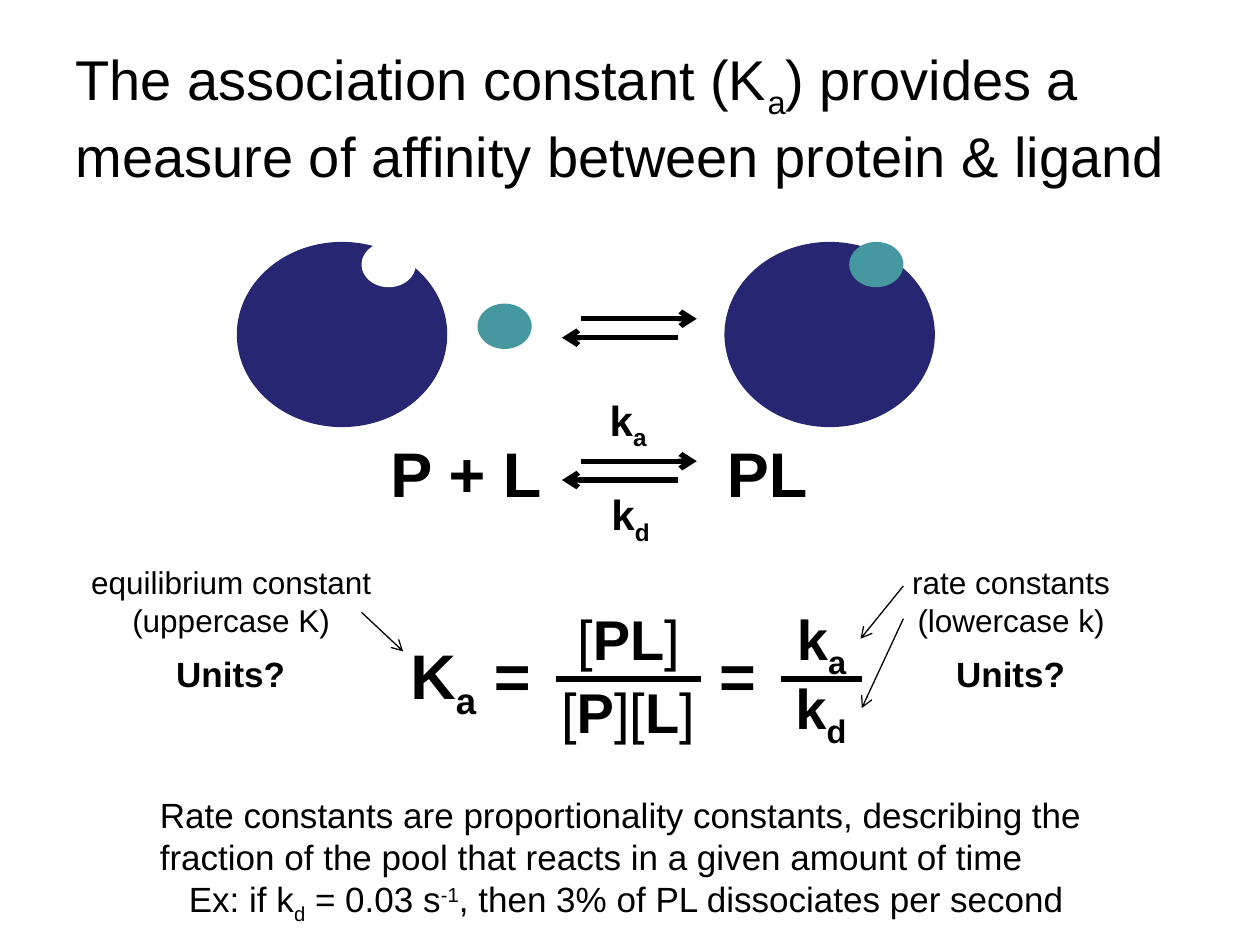
from dataclasses import dataclass
from typing import NamedTuple

from lxml import etree
from pptx import Presentation
from pptx import util as u
from pptx.dml.color import RGBColor
from pptx.enum import shapes, text
from pptx.oxml import ns

BLACK, WHITE, NAVY, TEAL = "000000", "FFFFFF", "262673", "4597A0"
LEFT, CENTER = text.PP_ALIGN.LEFT, text.PP_ALIGN.CENTER
SUBSCRIPT, SUPERSCRIPT = -25, 30


class Run(NamedTuple):
    text: str
    bold: bool = False
    baseline: int = 0


@dataclass
class Label:
    left: float
    top: float
    width: float
    height: float
    size: int
    paragraphs: list[list[Run]]
    align: text.PP_ALIGN = LEFT
    wrap: bool = False


@dataclass
class Line:
    start: tuple[float, float]
    end: tuple[float, float]
    weight: float = 3
    arrow: bool = True


def color(value: str) -> RGBColor:
    return RGBColor.from_string(value)


def add_runs(paragraph, runs: list[Run], size: int) -> None:
    for item in runs:
        run = paragraph.add_run()
        run.text = item.text
        run.font.name = "Arial"
        run.font.size = u.Pt(size)
        run.font.bold = item.bold
        run.font.color.rgb = color(BLACK)
        if item.baseline:
            run._r.get_or_add_rPr().set("baseline", str(item.baseline * 1000))


def add_label(slide, label: Label):
    box = slide.shapes.add_textbox(*map(u.Inches, (label.left, label.top, label.width, label.height)))
    frame = box.text_frame
    frame.word_wrap = label.wrap
    frame.auto_size = text.MSO_AUTO_SIZE.SHAPE_TO_FIT_TEXT
    for index, runs in enumerate(label.paragraphs):
        paragraph = frame.add_paragraph() if index else frame.paragraphs[0]
        paragraph.alignment = label.align
        add_runs(paragraph, runs, label.size)
    return box


def add_line(slide, line: Line) -> None:
    connector = slide.shapes.add_connector(
        shapes.MSO_CONNECTOR.STRAIGHT, *map(u.Inches, (*line.start, *line.end)))
    connector.line.color.rgb = color(BLACK)
    connector.line.width = u.Pt(line.weight)
    if line.arrow:
        etree.SubElement(connector.line._get_or_add_ln(), ns.qn("a:tailEnd"), type="arrow")
    etree.SubElement(connector._element.spPr, ns.qn("a:effectLst"))


def add_ellipse(slide, left: float, top: float, width: float, height: float, fill: str) -> None:
    shape = slide.shapes.add_shape(
        shapes.MSO_SHAPE.OVAL, *map(u.Inches, (left, top, width, height)))
    shape.shadow.inherit = False
    shape.fill.solid()
    shape.fill.fore_color.rgb = color(fill)
    shape.line.fill.background()


def add_ligand(slide, left: float, top: float, fill: str = TEAL) -> None:
    add_ellipse(slide, left, top, 0.43, 0.36, fill)


def add_protein(slide, left: float, site_fill: str) -> None:
    add_ellipse(slide, left, 1.92, 1.67, 1.47, NAVY)
    add_ligand(slide, left + 0.99, 1.92, site_fill)


def add_equilibrium_arrows(slide, top: float) -> None:
    add_line(slide, Line((4.61, top), (5.53, top)))
    add_line(slide, Line((5.38, top + 0.15), (4.46, top + 0.15)))


def rate_constant(subscript: str) -> list[list[Run]]:
    return [[Run("k", True), Run(subscript, True, SUBSCRIPT)]]


def add_title(slide) -> None:
    title = slide.shapes.title
    title.left, title.top, title.width, title.height = map(u.Inches, (0.5, 0.3, 9, 1.25))
    frame = title.text_frame
    frame.word_wrap = True
    frame.auto_size = text.MSO_AUTO_SIZE.NONE
    frame.vertical_anchor = text.MSO_ANCHOR.MIDDLE
    frame.paragraphs[0].alignment = LEFT
    add_runs(frame.paragraphs[0], [
        Run("The association constant (K"),
        Run("a", baseline=SUBSCRIPT),
        Run(") provides a measure of affinity between protein & ligand"),
    ], 32)


def add_reaction(slide) -> None:
    add_protein(slide, 1.88, WHITE)
    add_ligand(slide, 3.79, 2.41)
    add_protein(slide, 5.75, TEAL)
    for top in (2.53, 3.66):
        add_equilibrium_arrows(slide, top)
    for label in (
        Label(3, 3.4, 1.41, 0.71, 36, [[Run("P + L", True)]]),
        Label(5.67, 3.4, 0.85, 0.71, 36, [[Run("PL", True)]]),
        Label(4.73, 3.08, 0.51, 0.5, 24, rate_constant("a"), CENTER),
        Label(4.74, 3.83, 0.53, 0.5, 24, rate_constant("d"), CENTER),
    ):
        add_label(slide, label)


def add_equation(slide) -> None:
    equation = add_label(slide, Label(3.16, 5, 3.03, 0.71, 36, [
        [Run("K", True), Run("a", True, SUBSCRIPT), Run(" =\t=", True)]], wrap=True))
    properties = equation.text_frame.paragraphs[0]._p.get_or_add_pPr()
    tabs = etree.SubElement(properties, ns.qn("a:tabLst"))
    etree.SubElement(tabs, ns.qn("a:tab"), pos=str(u.Inches(2.45)), algn="l")
    for label in (
        Label(4.48, 4.75, 1.02, 0.64, 32,
              [[Run("["), Run("PL", True), Run("]")]], CENTER),
        Label(4.35, 5.33, 1.27, 0.64, 32,
              [[Run("["), Run("P", True), Run("]["), Run("L", True), Run("]")]], CENTER),
        Label(6.21, 4.75, 0.62, 0.64, 32, rate_constant("a"), CENTER),
        Label(6.2, 5.3, 0.63, 0.64, 32, rate_constant("d"), CENTER),
    ):
        add_label(slide, label)
    for right, left in ((5.56, 4.41), (6.84, 6.2)):
        add_line(slide, Line((right, 5.39), (left, 5.39), arrow=False))


def add_annotations(slide) -> None:
    for label in (
        Label(0.6, 4.42, 2.47, 0.71, 18,
              [[Run("equilibrium constant")], [Run("(uppercase K)")]], CENTER),
        Label(7.13, 4.42, 1.79, 0.71, 18,
              [[Run("rate constants")], [Run("(lowercase k)")]], CENTER),
    ):
        add_label(slide, label)
    for left in (1.3, 7.49):
        add_label(slide, Label(left, 5.13, 1.07, 0.44, 20, [[Run("Units?", True)]]))
    for start, end in (
        ((2.87, 4.86), (3.2, 5.17)),
        ((7.17, 4.65), (6.83, 5.07)),
        ((7.17, 4.91), (6.84, 5.62)),
    ):
        add_line(slide, Line(start, end, 0.75))


def add_explanation(slide) -> None:
    box = add_label(slide, Label(1.17, 6.25, 8.25, 1.11, 20, [
        [Run("Rate constants are proportionality constants, describing the "
             "fraction of the pool that reacts in a given amount of time")],
        [Run("Ex: if k"), Run("d", baseline=SUBSCRIPT), Run(" = 0.03 s"),
         Run("-1", baseline=SUPERSCRIPT), Run(", then 3% of PL dissociates per second")],
    ], wrap=True))
    example = box.text_frame.paragraphs[1]._p.get_or_add_pPr()
    example.set("marL", str(u.Inches(0.23)))


def main() -> None:
    presentation = Presentation()
    presentation.slide_width = u.Inches(10)
    presentation.slide_height = u.Inches(7.5)
    slide = presentation.slides.add_slide(presentation.slide_layouts[5])
    add_title(slide)
    add_reaction(slide)
    add_equation(slide)
    add_annotations(slide)
    add_explanation(slide)
    presentation.save("out.pptx")


if __name__ == "__main__":
    main()
